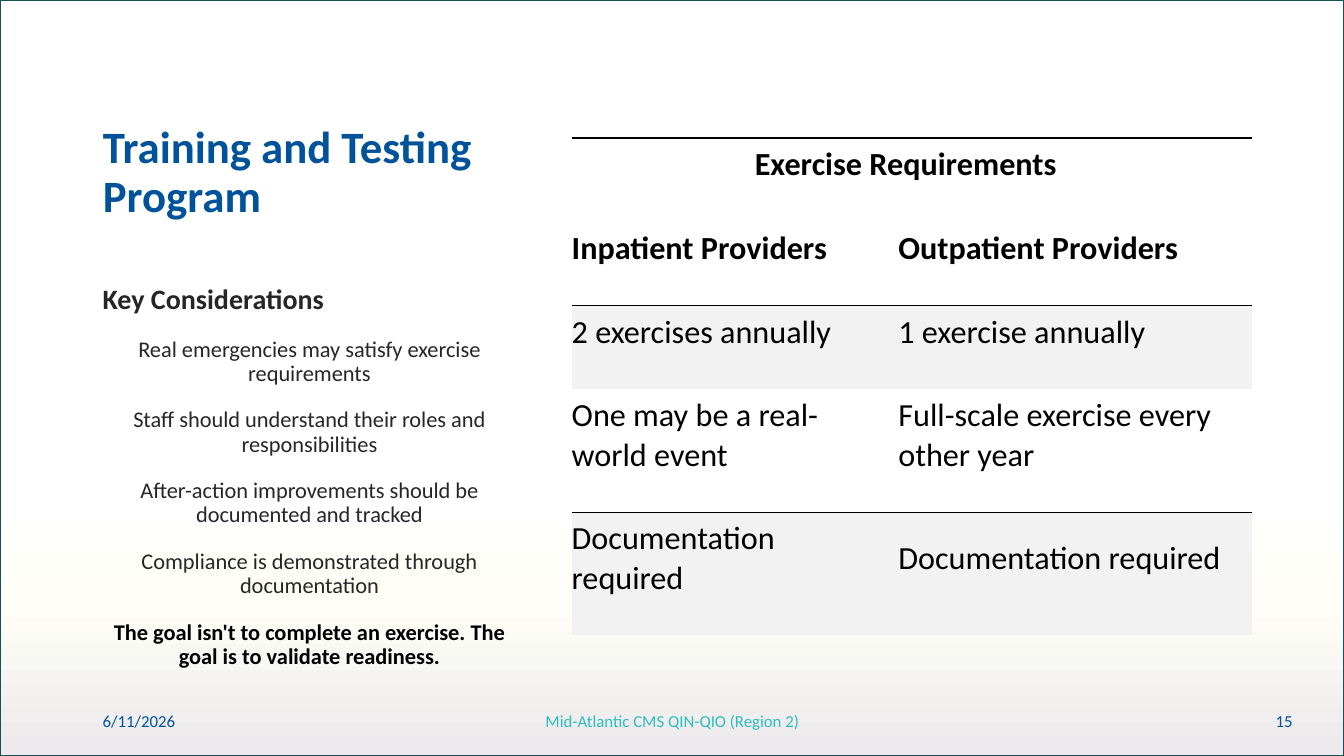
import pptx
import pptx.util
import pptx.dml.color
import pptx.enum.shapes
import pptx.enum.text
import pptx.oxml
import pptx.oxml.ns
from lxml import etree

Inches = pptx.util.Inches
Pt = pptx.util.Pt
ALIGN = pptx.enum.text.PP_ALIGN
ANCHOR = pptx.enum.text.MSO_ANCHOR
qn = pptx.oxml.ns.qn

COLORS = {
    "blue": "00539B", "teal": "2EBDC0", "frame": "145354", "dark": "262626",
    "black": "000000", "band": "F2F2F2",
    "top": "FFFFFF", "middle": "FFFFF7", "bottom": "ECEAEC",
}
GRADIENT = [(66, "top"), (80, "middle"), (99, "bottom")]
CONSIDERATIONS = [
    "Real emergencies may satisfy exercise requirements",
    "Staff should understand their roles and responsibilities",
    "After-action improvements should be documented and tracked",
    "Compliance is demonstrated through documentation",
]
GOAL = "The goal isn't to complete an exercise. The goal is to validate readiness."
REQUIREMENTS = [
    ("Exercise Requirements", ""),
    ("Inpatient Providers", "Outpatient Providers"),
    ("2 exercises annually", "1 exercise annually"),
    ("One may be a real-world event", "Full-scale exercise every other year"),
    ("Documentation required", "Documentation required"),
]
COLUMN_WIDTHS = [3.24, 3.51]
ROW_HEIGHTS = [0.83, 0.83, 0.83, 1.22, 1.22]
RULES = {0: 2.25, 2: 0.5, 4: 0.5}
NO_GRID_STYLE = "{2D5ABB26-0587-4C30-8999-92F81FD0307C}"


def rgb(name):
    return pptx.dml.color.RGBColor.from_string(COLORS[name])


def style_paragraph(para, size, color, bold=False, align=ALIGN.LEFT):
    para.alignment = align
    for span in para.runs:
        span.font.name = "Calibri"
        span.font.size = Pt(size)
        span.font.bold = bold
        span.font.color.rgb = rgb(color)


def add_backdrop(page, width, height):
    backdrop = page.shapes.add_shape(
        pptx.enum.shapes.MSO_SHAPE.RECTANGLE, 0, 0, width, height)
    backdrop.shadow.inherit = False
    backdrop.line.color.rgb = rgb("frame")
    backdrop.line.width = Pt(1.5)
    backdrop.fill.gradient()
    backdrop.fill.gradient_angle = 270
    stops = backdrop._element.spPr.find(".//" + qn("a:gsLst"))
    for stop in list(stops):
        stops.remove(stop)
    for position, color in GRADIENT:
        stop = etree.SubElement(stops, qn("a:gs"), pos=str(position * 1000))
        etree.SubElement(stop, qn("a:srgbClr"), val=COLORS[color])
    page.shapes._spTree.insert(2, backdrop._element)


def add_title(page, text):
    title = page.shapes.title
    title.left, title.top = Inches(0.92), Inches(0.9)
    title.width, title.height = Inches(4.3), Inches(1.35)
    frame = title.text_frame
    frame.text = text
    frame.word_wrap = True
    frame.auto_size = pptx.enum.text.MSO_AUTO_SIZE.NONE
    frame.vertical_anchor = ANCHOR.BOTTOM
    frame.paragraphs[0].line_spacing = 0.9
    style_paragraph(frame.paragraphs[0], 32, "blue", bold=True)


def add_considerations(page):
    box = page.shapes.add_textbox(Inches(0.92), Inches(2.78), Inches(4.3), Inches(4.17))
    frame = box.text_frame
    frame.word_wrap = True
    frame.text = "\n".join(["Key Considerations", *CONSIDERATIONS, GOAL])
    heading, *points, goal = frame.paragraphs
    for para in frame.paragraphs:
        para.line_spacing = 0.9
        para.space_before = Pt(10)
        para.space_after = Pt(6)
    heading.space_before = Pt(0)
    style_paragraph(heading, 20, "dark", bold=True)
    for point in points:
        style_paragraph(point, 16, "dark", align=ALIGN.CENTER)
    style_paragraph(goal, 16, "black", bold=True, align=ALIGN.CENTER)


def add_footer(page, text, left, width, color, align):
    box = page.shapes.add_textbox(Inches(left), Inches(6.95), Inches(width), Inches(0.4))
    frame = box.text_frame
    frame.word_wrap = True
    frame.vertical_anchor = ANCHOR.MIDDLE
    frame.text = text
    frame.paragraphs[0].space_after = Pt(6)
    style_paragraph(frame.paragraphs[0], 12, color, align=align)


def set_borders(cell, row):
    properties = cell._tc.get_or_add_tcPr()
    widths = {"lnL": None, "lnR": None, "lnT": RULES.get(row), "lnB": RULES.get(row + 1)}
    for index, (side, width) in enumerate(widths.items()):
        border = etree.Element(qn("a:" + side))
        if width:
            border.set("w", str(Pt(width)))
            fill = etree.SubElement(border, qn("a:solidFill"))
            etree.SubElement(fill, qn("a:srgbClr"), val=COLORS["black"])
        else:
            etree.SubElement(border, qn("a:noFill"))
        properties.insert(index, border)


def format_cell(cell, row, text):
    cell.text = text
    cell.vertical_anchor = ANCHOR.MIDDLE
    cell.margin_left, cell.margin_top = Inches(0), Inches(0.05)
    cell.margin_right, cell.margin_bottom = Inches(0.12), Inches(0.35)
    if row in (2, 4):
        cell.fill.solid()
        cell.fill.fore_color.rgb = rgb("band")
    else:
        cell.fill.background()
    set_borders(cell, row)
    align = ALIGN.CENTER if row == 0 else ALIGN.LEFT
    style_paragraph(cell.text_frame.paragraphs[0], 23, "black", bold=row < 2, align=align)


def add_requirements(page):
    table = page.shapes.add_table(
        len(ROW_HEIGHTS), len(COLUMN_WIDTHS), Inches(5.67), Inches(1.37),
        Inches(sum(COLUMN_WIDTHS)), Inches(sum(ROW_HEIGHTS))).table
    table._tbl.tblPr.find(qn("a:tableStyleId")).text = NO_GRID_STYLE
    table.horz_banding = False
    for column, width in zip(table.columns, COLUMN_WIDTHS):
        column.width = Inches(width)
    for row, (height, texts) in enumerate(zip(ROW_HEIGHTS, REQUIREMENTS)):
        table.rows[row].height = Inches(height)
        for column, text in enumerate(texts):
            format_cell(table.cell(row, column), row, text)
    table.cell(0, 0).merge(table.cell(0, 1))


def main():
    deck = pptx.Presentation()
    deck.slide_width, deck.slide_height = Inches(13.33), Inches(7.5)
    page = deck.slides.add_slide(deck.slide_layouts[5])
    add_backdrop(page, deck.slide_width, deck.slide_height)
    add_title(page, "Training and Testing Program")
    add_considerations(page)
    add_footer(page, "6/11/2026", 0.92, 1.85, "blue", ALIGN.LEFT)
    add_footer(page, "Mid-Atlantic CMS QIN-QIO (Region 2)", 4.42, 4.5, "teal", ALIGN.CENTER)
    add_footer(page, "15", 9.92, 3, "blue", ALIGN.RIGHT)
    add_requirements(page)
    deck.save("out.pptx")


if __name__ == "__main__":
    main()
